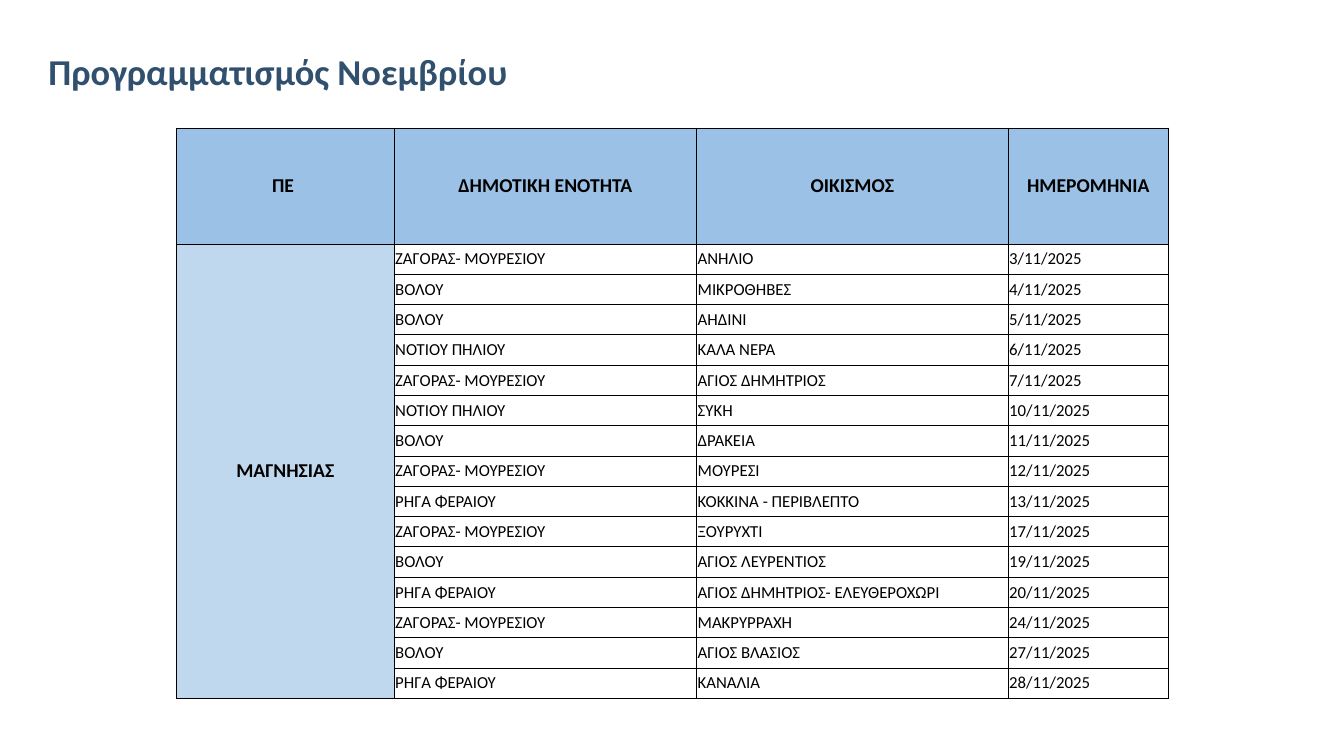
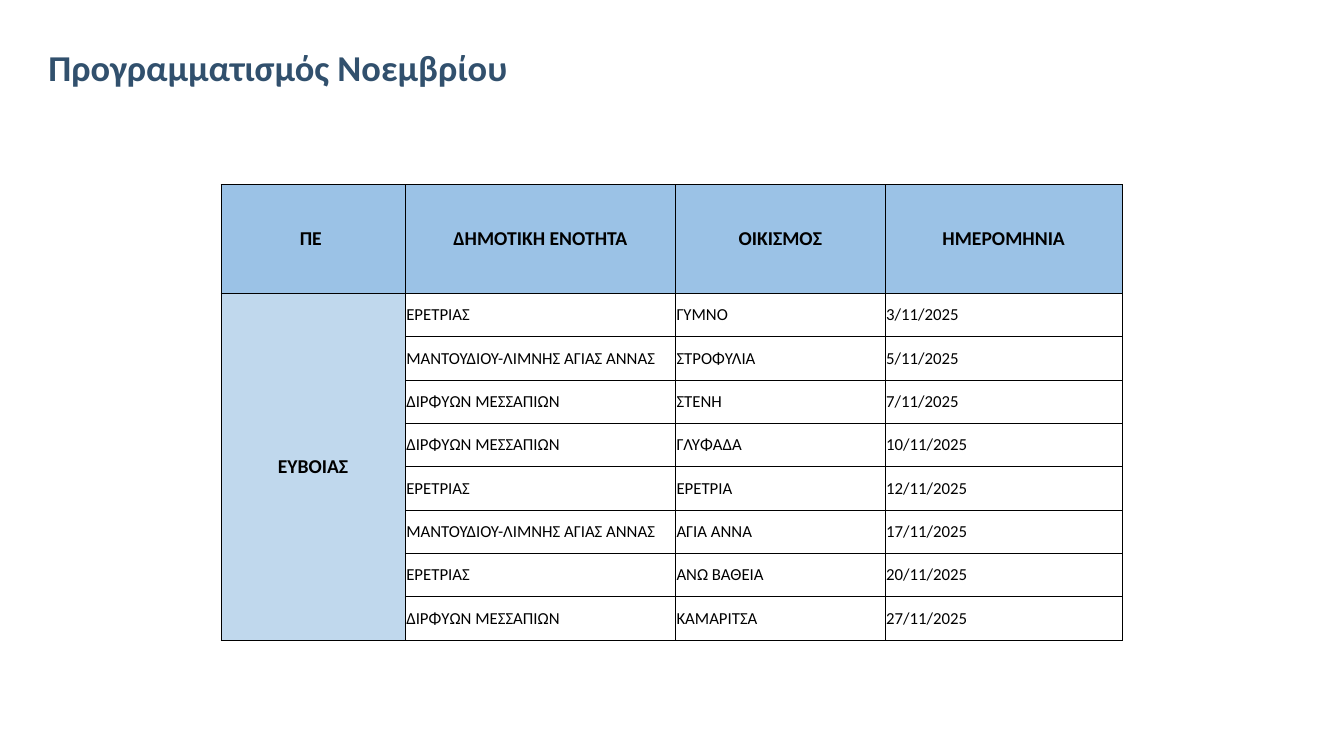
from lxml.etree import SubElement
from pptx import Presentation
from pptx.dml.color import RGBColor
from pptx.enum.text import MSO_ANCHOR as Anchor, PP_ALIGN as Align
from pptx.oxml.ns import qn
from pptx.util import Inches, Pt

FONT = "Calibri"
TITLE_COLOR = RGBColor(0x31, 0x50, 0x6D)
HEADER_FILL = RGBColor(0x9B, 0xC2, 0xE6)
REGION_FILL = RGBColor(0xC0, 0xD8, 0xED)
WHITE = RGBColor(0xFF, 0xFF, 0xFF)
BLACK = RGBColor(0x00, 0x00, 0x00)

TITLE = "Προγραμματισμός Νοεμβρίου"
HEADERS = ["ΠΕ ", "ΔΗΜΟΤΙΚΗ ΕΝΟΤΗΤΑ", "ΟΙΚΙΣΜΟΣ", "ΗΜΕΡΟΜΗΝΙΑ"]
ZAGORA = "ΖΑΓΟΡΑΣ- ΜΟΥΡΕΣΙΟΥ"
VOLOS = "ΒΟΛΟΥ"
SOUTH_PELION = "ΝΟΤΙΟΥ ΠΗΛΙΟΥ"
RIGAS = "ΡΗΓΑ ΦΕΡΑΙΟΥ"
ERETRIA = "ΕΡΕΤΡΙΑΣ"
MANTOUDI = "ΜΑΝΤΟΥΔΙΟΥ-ΛΙΜΝΗΣ ΑΓΙΑΣ ΑΝΝΑΣ"
DIRFYS = "ΔΙΡΦΥΩΝ ΜΕΣΣΑΠΙΩΝ"

MAGNESIA_VISITS = [
    (ZAGORA, "ΑΝΗΛΙΟ", 3),
    (VOLOS, "ΜΙΚΡΟΘΗΒΕΣ", 4),
    (VOLOS, "ΑΗΔΙΝΙ", 5),
    (SOUTH_PELION, "ΚΑΛΑ ΝΕΡΑ", 6),
    (ZAGORA, "ΑΓΙΟΣ ΔΗΜΗΤΡΙΟΣ", 7),
    (SOUTH_PELION, "ΣΥΚΗ", 10),
    (VOLOS, "ΔΡΑΚΕΙΑ", 11),
    (ZAGORA, "ΜΟΥΡΕΣΙ", 12),
    (RIGAS, "ΚΟΚΚΙΝΑ - ΠΕΡΙΒΛΕΠΤΟ", 13),
    (ZAGORA, "ΞΟΥΡΥΧΤΙ", 17),
    (VOLOS, "ΑΓΙΟΣ ΛΕΥΡΕΝΤΙΟΣ", 19),
    (RIGAS, "ΑΓΙΟΣ ΔΗΜΗΤΡΙΟΣ- ΕΛΕΥΘΕΡΟΧΩΡΙ", 20),
    (ZAGORA, "ΜΑΚΡΥΡΡΑΧΗ", 24),
    (VOLOS, "ΑΓΙΟΣ ΒΛΑΣΙΟΣ", 27),
    (RIGAS, "ΚΑΝΑΛΙΑ", 28),
]
EVIA_VISITS = [
    (ERETRIA, "ΓΥΜΝΟ", 3),
    (MANTOUDI, "ΣΤΡΟΦΥΛΙΑ", 5),
    (DIRFYS, "ΣΤΕΝΗ", 7),
    (DIRFYS, "ΓΛΥΦΑΔΑ", 10),
    (ERETRIA, "ΕΡΕΤΡΙΑ", 12),
    (MANTOUDI, "ΑΓΙΑ ΑΝΝΑ", 17),
    (ERETRIA, "ΑΝΩ ΒΑΘΕΙΑ", 20),
    (DIRFYS, "ΚΑΜΑΡΙΤΣΑ", 27),
]


def add_span(para, text, size, color, bold):
    span = para.add_run()
    span.text = text
    span.font.name = FONT
    span.font.size = Pt(size)
    span.font.bold = bold
    span.font.color.rgb = color


def add_title(page, left, top, width, height):
    box = page.shapes.add_textbox(Inches(left), Inches(top), Inches(width), Inches(height))
    frame = box.text_frame
    frame.word_wrap = True
    frame.vertical_anchor = Anchor.BOTTOM
    frame.margin_left = Inches(0.12)
    para = frame.paragraphs[0]
    para.line_spacing = 0.9
    add_span(para, TITLE, 26, TITLE_COLOR, True)


def add_borders(cell):
    properties = cell._tc.get_or_add_tcPr()
    for position, side in enumerate(("a:lnL", "a:lnR", "a:lnT", "a:lnB")):
        line = SubElement(properties, qn(side), w=str(Pt(0.5)))
        fill = SubElement(line, qn("a:solidFill"))
        SubElement(fill, qn("a:srgbClr"), val=str(BLACK))
        properties.insert(position, line)


def style_cell(cell, fill):
    cell.fill.solid()
    cell.fill.fore_color.rgb = fill
    cell.vertical_anchor = Anchor.MIDDLE
    cell.margin_left = cell.margin_right = Inches(0.01)
    cell.margin_top = cell.margin_bottom = Inches(0.05)
    add_borders(cell)


def write_cell(cell, text, heading):
    para = cell.text_frame.paragraphs[0]
    para.alignment = Align.CENTER if heading else Align.LEFT
    add_span(para, text, 14 if heading else 12, BLACK, heading)


def add_schedule(page, left, top, widths, header_height, row_height, region, visits):
    heights = [header_height] + [row_height] * len(visits)
    frame = page.shapes.add_table(len(heights), len(widths), Inches(left), Inches(top),
                                  Inches(sum(widths)), Inches(sum(heights)))
    table = frame.table
    table.first_row = table.horz_banding = False
    for column, width in zip(table.columns, widths):
        column.width = Inches(width)
    for row, height in zip(table.rows, heights):
        row.height = Inches(height)

    for row_index in range(len(heights)):
        for column_index in range(len(widths)):
            fill = HEADER_FILL if row_index == 0 else REGION_FILL if column_index == 0 else WHITE
            style_cell(table.cell(row_index, column_index), fill)

    for column_index, header in enumerate(HEADERS):
        write_cell(table.cell(0, column_index), header, True)
    region_cell = table.cell(1, 0)
    region_cell.merge(table.cell(len(visits), 0))
    write_cell(region_cell, region, True)
    for row_index, (unit, settlement, day) in enumerate(visits, 1):
        for column_index, text in enumerate((unit, settlement, f"{day}/11/2025"), 1):
            write_cell(table.cell(row_index, column_index), text, False)


def add_page(deck, title_height, **schedule):
    page = deck.slides.add_slide(deck.slide_layouts[6])
    add_title(page, 0.36, 0.25, 12.4, title_height)
    add_schedule(page, **schedule)


def main():
    deck = Presentation()
    deck.slide_width = Inches(13.33)
    deck.slide_height = Inches(7.5)
    add_page(deck, 0.73, left=1.75, top=1.27, widths=[2.16, 3, 3.09, 1.59],
             header_height=1.15, row_height=0.27, region="ΜΑΓΝΗΣΙΑΣ", visits=MAGNESIA_VISITS)
    add_page(deck, 0.69, left=2.19, top=1.83, widths=[1.83, 2.68, 2.08, 2.35],
             header_height=1.08, row_height=0.43, region="ΕΥΒΟΙΑΣ", visits=EVIA_VISITS)
    deck.save("out.pptx")


if __name__ == "__main__":
    main()
